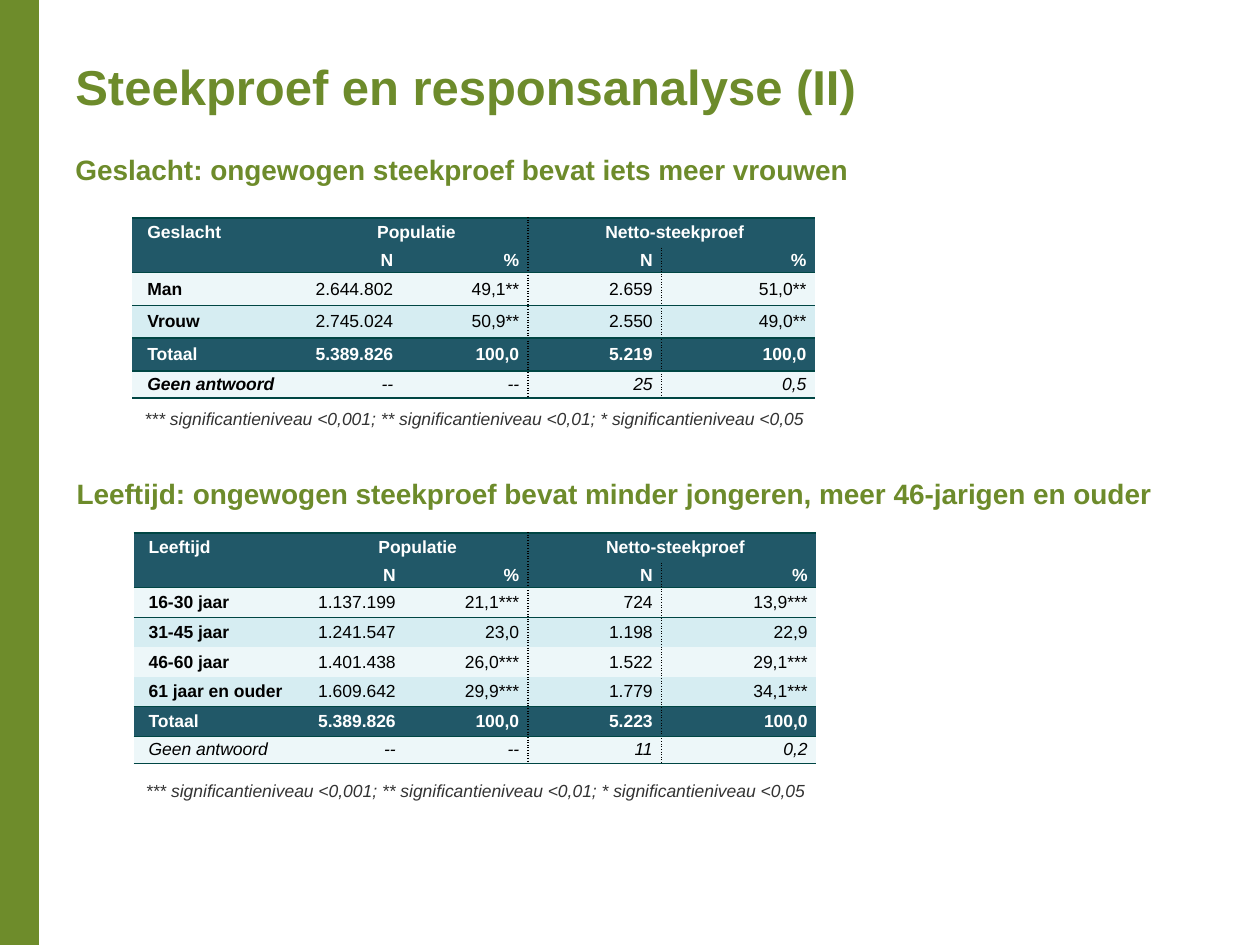
import pptx
import pptx.util
import pptx.dml.color
import pptx.enum.shapes
import pptx.enum.text
import pptx.oxml.ns
from lxml import etree

COLORS = {"bar": "6E8C2B", "heading": "6D8B2B", "note": "333333", "dark": "215868",
          "light": "EDF7F9", "tint": "D6EDF2", "rule": "004644",
          "black": "000000", "white": "FFFFFF"}
ALIGN = pptx.enum.text.PP_ALIGN
ANCHOR = pptx.enum.text.MSO_ANCHOR
qn = pptx.oxml.ns.qn

deck = pptx.Presentation()
deck.slide_width = pptx.util.Inches(10)
deck.slide_height = pptx.util.Inches(7.5)
page = deck.slides.add_slide(deck.slide_layouts[6])

# The page is a grid of 100 columns and 75 rows
COLUMN = deck.slide_width // 100
ROW = deck.slide_height // 75


def write(para, text, color, **formats):
    """Add one run of text with the given font values."""
    span = para.add_run()
    span.text = text
    for name, value in {"name": "Arial", **formats}.items():
        setattr(span.font, name, value)
    span.font.color.rgb = pptx.dml.color.RGBColor.from_string(COLORS[color])


def border(cell, side, color, dash):
    """Draw one edge of a table cell, 1 pt wide."""
    line = etree.SubElement(cell._tc.get_or_add_tcPr(), qn("a:ln" + side), w="12700")
    fill = etree.SubElement(line, qn("a:solidFill"))
    etree.SubElement(fill, qn("a:srgbClr"), val=COLORS[color])
    etree.SubElement(line, qn("a:prstDash"), val=dash)


# Green bar on the left
bar = page.shapes.add_shape(pptx.enum.shapes.MSO_SHAPE.RECTANGLE,
                            0, 0, int(3.1 * COLUMN), deck.slide_height)
bar.shadow.inherit = False
bar.fill.solid()
bar.fill.fore_color.rgb = pptx.dml.color.RGBColor.from_string(COLORS["bar"])
bar.line.fill.background()

# Headings and notes: left, top, width, height, text, kind
NOTE = "*** significantieniveau <0,001; ** significantieniveau <0,01; * significantieniveau <0,05"
KINDS = {
    "title": ("heading", {"size": pptx.util.Pt(28), "bold": True}),
    "heading": ("heading", {"size": pptx.util.Pt(16), "bold": True}),
    "note": ("note", {"size": pptx.util.Pt(10), "italic": True}),
}
texts = [
    (5, 4, 64.8, 5.7, "Steekproef en responsanalyse (II)", "title"),
    (5, 11.6, 64.1, 3.7, "Geslacht: ongewogen steekproef bevat iets meer vrouwen", "heading"),
    (10.5, 31.9, 58.2, 2.7, NOTE, "note"),
    (5.1, 37.3, 89.8, 3.7,
     "Leeftijd: ongewogen steekproef bevat minder jongeren, meer 46-jarigen en ouder", "heading"),
    (10.6, 61.4, 58.2, 2.7, NOTE, "note"),
]
for left, top, width, height, text, kind in texts:
    box = page.shapes.add_textbox(int(left * COLUMN), int(top * ROW),
                                  int(width * COLUMN), int(height * ROW))
    frame = box.text_frame
    frame.word_wrap = kind == "note"
    frame.auto_size = pptx.enum.text.MSO_AUTO_SIZE.SHAPE_TO_FIT_TEXT
    para = frame.paragraphs[0]
    if kind == "note":
        frame.vertical_anchor = ANCHOR.MIDDLE
        para.alignment = ALIGN.JUSTIFY
    color, formats = KINDS[kind]
    write(para, text, color, **formats)

# Tables: left, top, column widths, body row height, bold last label, rows below the header
tables = [
    (10.5, 17.3, [13.2, 8.2, 10, 10.6, 12.2], 2.6, True, "Geslacht", [
        ["Man", "2.644.802", "49,1**", "2.659", "51,0**"],
        ["Vrouw", "2.745.024", "50,9**", "2.550", "49,0**"],
        ["Totaal", "5.389.826", "100,0", "5.219", "100,0"],
        ["Geen antwoord", "--", "--", "25", "0,5"]]),
    (10.6, 42.3, [13.3, 8.2, 9.8, 10.6, 12.3], 2.36, False, "Leeftijd", [
        ["16-30 jaar", "1.137.199", "21,1***", "724", "13,9***"],
        ["31-45 jaar", "1.241.547", "23,0", "1.198", "22,9"],
        ["46-60 jaar", "1.401.438", "26,0***", "1.522", "29,1***"],
        ["61 jaar en ouder", "1.609.642", "29,9***", "1.779", "34,1***"],
        ["Totaal", "5.389.826", "100,0", "5.223", "100,0"],
        ["Geen antwoord", "--", "--", "11", "0,2"]]),
]
for left, top, widths, body_height, bold_last, title, body in tables:
    rows = [[title, "Populatie", "", "Netto-steekproef", ""], ["", "N", "%", "N", "%"]] + body
    last = len(rows) - 1
    total = last - 1
    heights = [2.35, 2] + [body_height] * (len(body) - 1) + [2.15]
    table = page.shapes.add_table(len(rows), len(widths), int(left * COLUMN), int(top * ROW),
                                  int(sum(widths) * COLUMN), int(sum(heights) * ROW)).table
    # Plain style without grid lines
    table._tbl.tblPr.find(qn("a:tableStyleId")).text = "{2D5ABB26-0587-4C30-8999-92F81FD0307C}"
    for column, width in zip(table.columns, widths):
        column.width = int(width * COLUMN)
    for row, height in zip(table.rows, heights):
        row.height = int(height * ROW)
    for start in (1, 3):
        table.cell(0, start).merge(table.cell(0, start + 1))

    for r, values in enumerate(rows):
        dark = r < 2 or r == total
        shade = "dark" if dark else "light" if r == last or r % 2 == 0 else "tint"
        for c, text in enumerate(values):
            cell = table.cell(r, c)
            for name, value in {"margin_left": 0.7 * COLUMN, "margin_right": 0.7 * COLUMN,
                                "margin_top": 0, "margin_bottom": 0}.items():
                setattr(cell, name, int(value))
            cell.vertical_anchor = ANCHOR.MIDDLE

            # Dotted line between population and sample, rules between the sections
            if c == 3:
                border(cell, "L", "black", "sysDot")
            if c == 2 or (r == 0 and c == 1):
                border(cell, "R", "black", "sysDot")
            if r in (0, 2, total, last):
                border(cell, "T", "rule", "solid")
            if r in (1, total - 1, total, last):
                border(cell, "B", "rule", "solid")
            cell.fill.solid()
            cell.fill.fore_color.rgb = pptx.dml.color.RGBColor.from_string(COLORS[shade])

            para = cell.text_frame.paragraphs[0]
            if not text:
                etree.SubElement(para._p, qn("a:endParaRPr"), sz="1000")
                continue
            para.alignment = ALIGN.LEFT if c == 0 else ALIGN.CENTER if r == 0 else ALIGN.RIGHT
            if c == 0 or r < 2:
                para._p.get_or_add_pPr().set("marL", str(COLUMN // 2))
            write(para, text, "white" if dark else "black", size=pptx.util.Pt(10),
                  bold=dark or (c == 0 and (r < last or bold_last)), italic=r == last)

deck.save("out.pptx")
